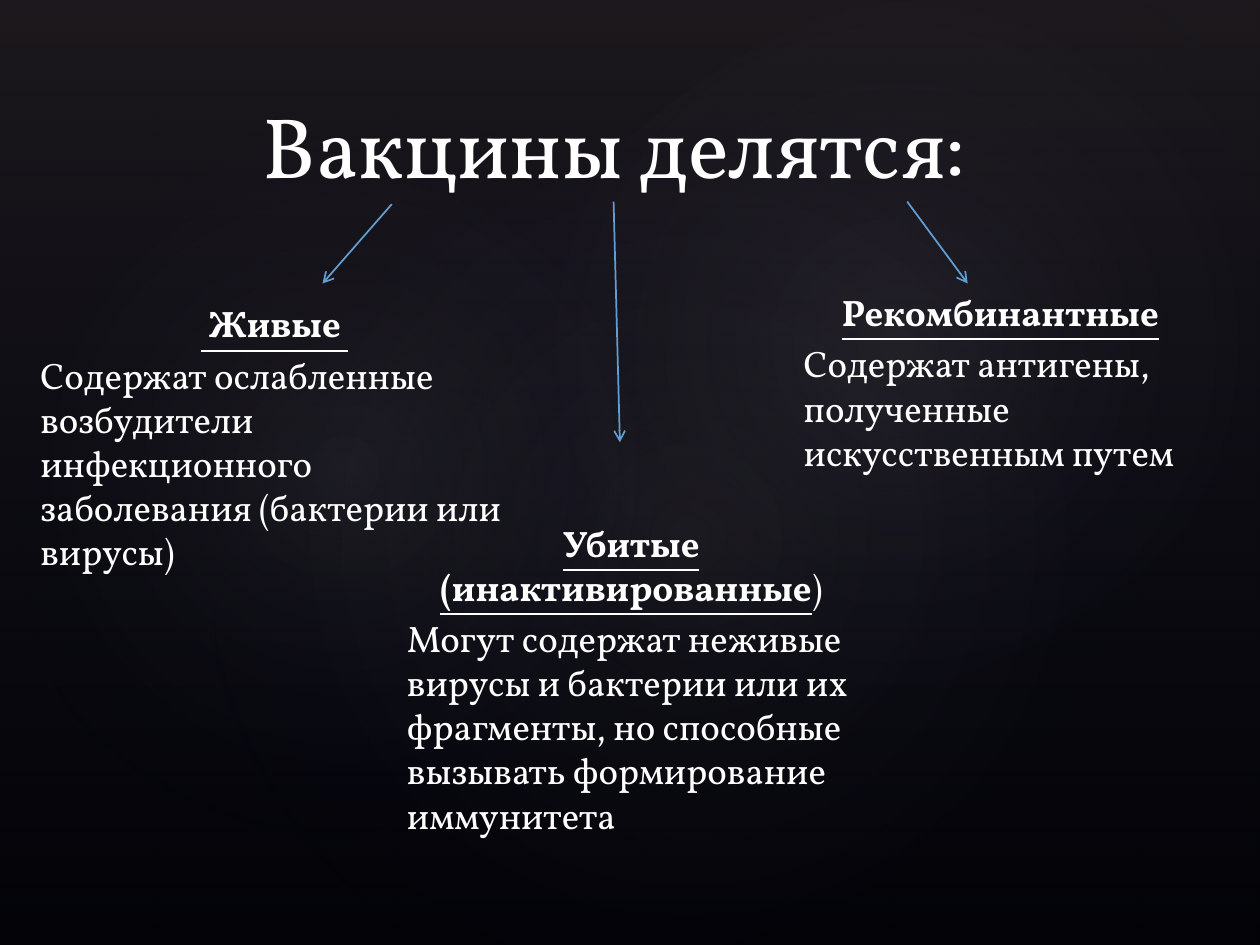
from lxml import etree
from pptx import Presentation
from pptx.dml.color import RGBColor
from pptx.enum.shapes import MSO_CONNECTOR, MSO_SHAPE
from pptx.enum.text import MSO_ANCHOR, MSO_AUTO_SIZE, PP_ALIGN
from pptx.oxml import parse_xml
from pptx.oxml.ns import qn
from pptx.util import Inches, Pt

RECT, OVAL = MSO_SHAPE.RECTANGLE, MSO_SHAPE.OVAL
LEFT, CENTER = PP_ALIGN.LEFT, PP_ALIGN.CENTER
TOP, BOTTOM = MSO_ANCHOR.TOP, MSO_ANCHOR.BOTTOM
FIXED = MSO_AUTO_SIZE.NONE
STRAIGHT = MSO_CONNECTOR.STRAIGHT
FONT = "Vollkorn"
NS = "http://schemas.openxmlformats.org/drawingml/2006/main"
color = RGBColor.from_string


def style(para, size, bold=False):
    font = para.font
    font.name, font.size, font.bold = FONT, Pt(size), bold
    font.underline = bold
    font.color.rgb = color("FFFFFF")


def glow(kind, box, turn, stops, flow):
    """Add a shape filled with a translucent gradient."""
    shape = slide.shapes.add_shape(kind, *map(Inches, box))
    shape.rotation = turn
    shape.shadow.inherit = False
    shape.line.fill.background()
    marks = "".join(
        f'<a:gs pos="{pos * 1000}"><a:srgbClr val="{tint}">'
        f'<a:alpha val="{alpha * 1000}"/></a:srgbClr></a:gs>'
        for pos, tint, alpha in stops)
    fill = parse_xml(f'<a:gradFill xmlns:a="{NS}" rotWithShape="1">'
                     f'<a:gsLst>{marks}</a:gsLst>{flow}</a:gradFill>')
    shape.element.spPr.find(qn("a:prstGeom")).addnext(fill)


deck = Presentation()
deck.slide_width, deck.slide_height = Inches(10), Inches(7.5)
slide = deck.slides.add_slide(deck.slide_layouts[3])
title, live, dead = list(slide.placeholders)[:3]

# Dark backdrop with soft glows
slide.background.fill.solid()
slide.background.fill.fore_color.rgb = color("000000")
glow(RECT, (0, 0, 10, 7.5), 0, [(0, "504652", 36), (100, "242852", 10)],
     '<a:lin ang="5400000" scaled="0"/>')
radial = ('<a:path path="circle"><a:fillToRect l="50000" t="50000" '
          'r="50000" b="50000"/></a:path>')
for box, turn, alpha in [((1.5, 1.14, 7.92, 6.24), 328.7, 7),
                         ((-0.3, 1.28, 6.06, 4.9), 294.3, 8),
                         ((3.58, 0.13, 7.09, 5.2), 328.7, 8)]:
    glow(OVAL, box, turn, [(0, "C4BCC6", alpha), (58, "242852", 0)], radial)

# Placeholders go in front of the backdrop
tree = title.element.getparent()
for holder in (title, live, dead):
    tree.append(holder.element)

# Title
title.left, title.top = Inches(0.75), Inches(0.6)
title.width, title.height = Inches(8.25), Inches(1)
frame = title.text_frame
frame.text = "Вакцины делятся:"
frame.auto_size, frame.vertical_anchor = FIXED, BOTTOM
frame.paragraphs[0].alignment = CENTER
style(frame.paragraphs[0], 49)

# Three kinds of vaccine: underlined heading and description
extra = slide.shapes.add_textbox(0, 0, 0, 0)
kinds = [
    (live, (0.2, 2.34, 3.94, 2.6), " Живые ", "",
     "Содержат ослабленные возбудители инфекционного заболевания "
     "(бактерии или вирусы)"),
    (dead, (3.11, 4.08, 3.78, 2.96), "Убитые (инактивированные", ")",
     "Могут содержат неживые вирусы и бактерии или их фрагменты, "
     "но способные вызывать формирование иммунитета"),
    (extra, (6.26, 2.25, 3.34, 3.15), "Рекомбинантные", "",
     "Содержат антигены, полученные искусственным путем"),
]
for part, box, name, tail, about in kinds:
    part.left, part.top, part.width, part.height = map(Inches, box)
    frame = part.text_frame
    frame.word_wrap = True
    frame.auto_size, frame.vertical_anchor = FIXED, TOP
    head, body = frame.paragraphs[0], frame.add_paragraph()
    head.text, body.text = name, about
    for para, align in ((head, CENTER), (body, LEFT)):
        para.alignment = align
        para.space_before = Pt(4.2)
        style(para, 21, bold=para is head)
        props = para.font._element.getparent()
        props.set("marL", str(Inches(0.02)))
        props.set("indent", "0")
        props.find(qn("a:defRPr")).addprevious(
            etree.Element(qn("a:buNone")))
    if tail:
        run = head.add_run()
        run.text = tail
        run.font.bold = run.font.underline = False

# Arrows from the title to each kind
for ends in [(3.11, 1.62, 2.56, 2.25), (4.87, 1.6, 4.92, 3.51),
             (7.2, 1.6, 7.68, 2.25)]:
    arrow = slide.shapes.add_connector(STRAIGHT, *map(Inches, ends))
    arrow.line.color.rgb = color("629DD1")
    arrow.line.width = Pt(1)
    line = arrow.line._get_or_add_ln()
    etree.SubElement(line, qn("a:tailEnd"), type="arrow")
    etree.SubElement(line.getparent(), qn("a:effectLst"))

deck.save("out.pptx")
